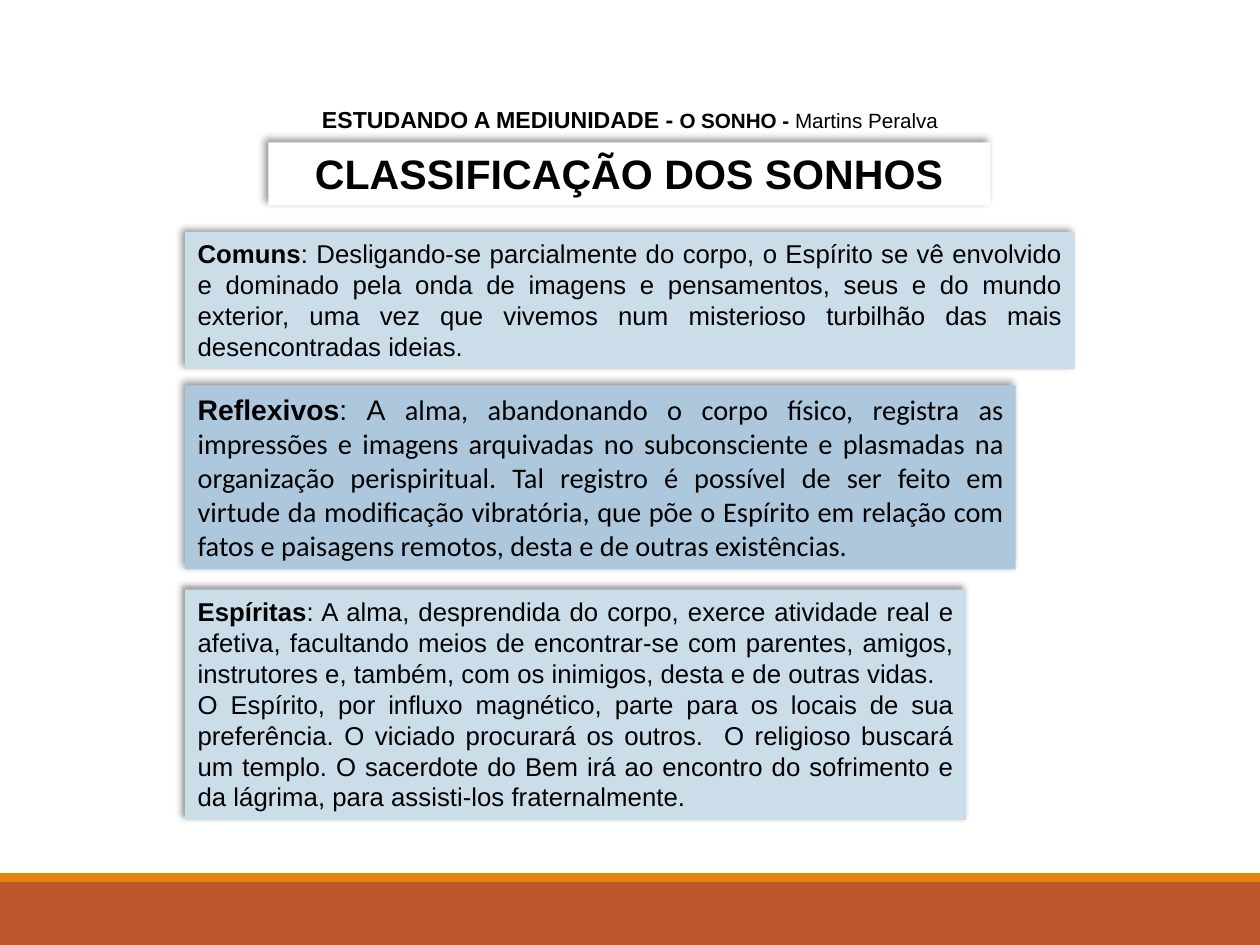
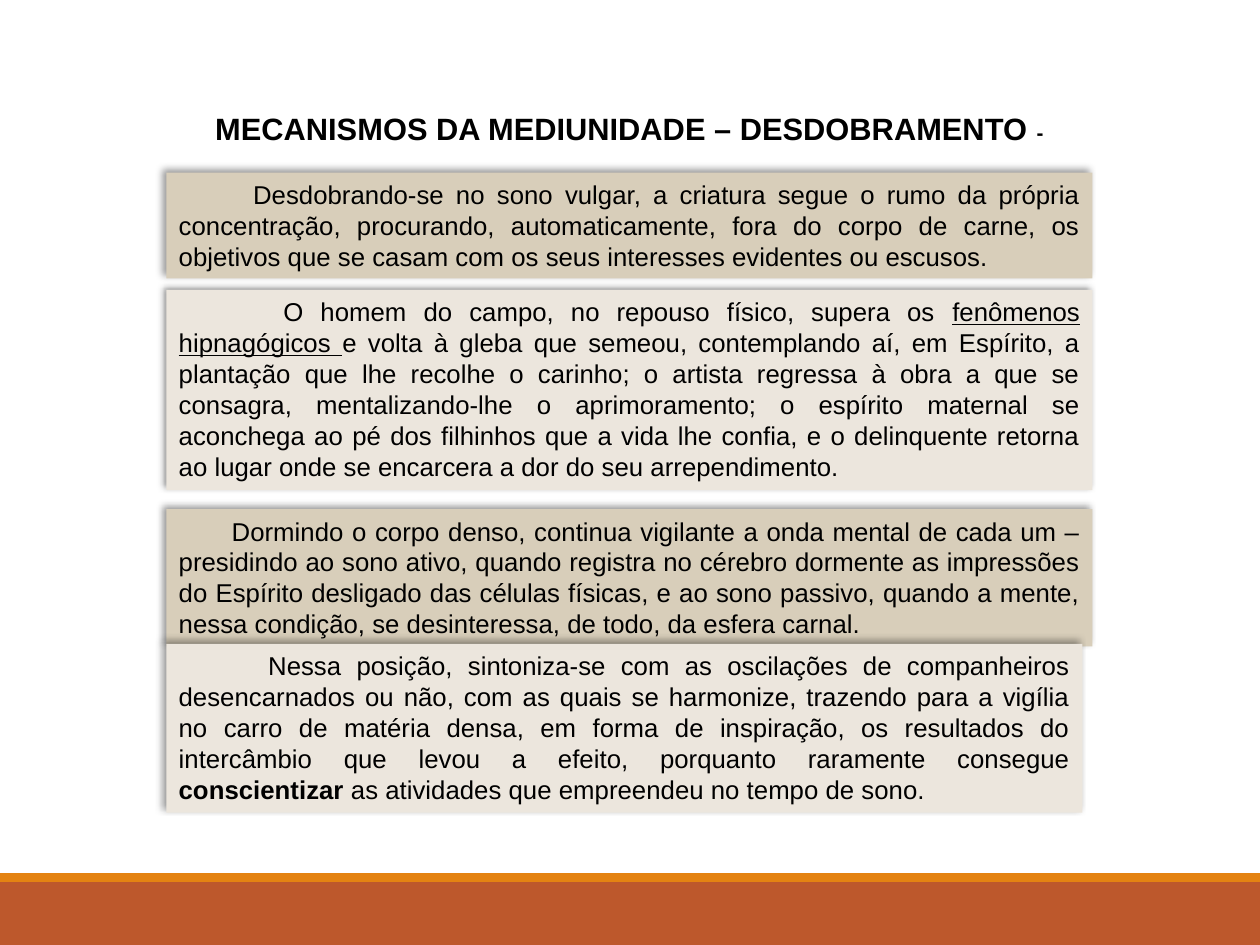
from lxml import etree
from pptx import Presentation
from pptx import util as u
from pptx.dml.color import RGBColor
from pptx.enum import shapes, text
from pptx.oxml.ns import qn

ORANGE, RUST, WHITE, BLACK = "E48312", "BD582C", "FFFFFF", "000000"
PALE_BLUE, BLUE = "CCDDEA", "ADC8DD"
SAND, PALE_SAND = "D8CEBA", "ECE6DD"
BODY = 14.7
CENTER, JUSTIFY = text.PP_ALIGN.CENTER, text.PP_ALIGN.JUSTIFY


def add_rect(s, box, color):
    sp = s.shapes.add_shape(shapes.MSO_SHAPE.RECTANGLE, *map(u.Inches, box))
    sp.shadow.inherit = False
    sp.fill.solid()
    sp.fill.fore_color.rgb = RGBColor.from_string(color)
    sp.line.fill.background()
    return sp


def add_text(s, box, paragraphs, size=BODY, fill=None, align=JUSTIFY, indent=0):
    """Each run is (text, {font attribute: value}); a fill makes a shadowed panel."""
    if fill:
        sp = add_rect(s, box, fill)
        effects = sp._element.spPr.find(qn("a:effectLst"))
        shadow = etree.SubElement(effects, qn("a:outerShdw"), blurRad=str(u.Pt(4)),
                                  dist=str(u.Pt(3)), dir=str(225 * 60000),
                                  algn="br", rotWithShape="0")
        color = etree.SubElement(shadow, qn("a:srgbClr"), val=BLACK)
        etree.SubElement(color, qn("a:alpha"), val="40000")
    else:
        sp = s.shapes.add_textbox(*map(u.Inches, box))
    tf = sp.text_frame
    tf.word_wrap = True
    tf.auto_size = text.MSO_AUTO_SIZE.SHAPE_TO_FIT_TEXT
    tf.vertical_anchor = text.MSO_ANCHOR.TOP
    for i, runs in enumerate(paragraphs):
        p = tf.add_paragraph() if i else tf.paragraphs[0]
        p.alignment = align
        p.font.size, p.font.name = u.Pt(size), "Arial"
        p.font.color.rgb = RGBColor.from_string(BLACK)
        if indent:
            p._p.get_or_add_pPr().set("indent", str(u.Inches(indent)))
        for words, look in runs:
            r = p.add_run()
            r.text = words
            # Run values are complete, so each run draws alike everywhere
            look = {"size": u.Pt(size), "name": "Arial", **look}
            for key, value in look.items():
                setattr(r.font, key, value)
            r.font.color.rgb = RGBColor.from_string(BLACK)


prs = Presentation()
prs.slide_width, prs.slide_height = u.Inches(10), u.Inches(7.5)
bold, small = {"bold": True}, {"size": u.Pt(11.8)}

# Shared footer bands
for _ in range(2):
    s = prs.slides.add_slide(prs.slide_layouts[6])
    add_rect(s, (0, 7, 10, 0.5), RUST)
    add_rect(s, (0, 6.93, 10, 0.07), ORANGE)
dreams, mechanisms = prs.slides

# Slide 1: headings
add_text(dreams, (1.47, 0.79, 7.06, 0.32),
         [[("ESTUDANDO A MEDIUNIDADE - ", bold),
           ("O SONHO - ", {**bold, **small}),
           ("Martins Peralva", small)]], size=13.2, align=CENTER)
add_text(dreams, (2.13, 1.13, 5.73, 0.5),
         [[("CLASSIFICAÇÃO DOS SONHOS", bold)]],
         size=23.5, fill=WHITE, align=CENTER)

# Slide 1: kinds of dream (top, width, height, fill, size, paragraphs)
kinds = [
    (1.84, 7.06, 1.09, PALE_BLUE, BODY, [[
        ("Comuns", bold),
        (": Desligando-se parcialmente do corpo, o Espírito se vê envolvido e "
         "dominado pela onda de imagens e pensamentos, seus e do mundo exterior, "
         "uma vez que vivemos num misterioso turbilhão das mais desencontradas "
         "ideias.", {})]]),
    (3.06, 6.59, 1.46, BLUE, 16.2, [[
        ("Reflexivos", bold),
        (": A", {}),
        (" alma, abandonando o corpo físico, registra as impressões e imagens "
         "arquivadas no subconsciente e plasmadas na organização perispiritual. "
         "Tal registro é possível de ser feito em virtude da modificação "
         "vibratória, que põe o Espírito em relação com fatos e paisagens "
         "remotos, desta e de outras existências.", {"name": "Calibri"})]]),
    (4.68, 6.2, 1.83, PALE_BLUE, BODY, [
        [("Espíritas", bold),
         (": A alma, desprendida do corpo, exerce atividade real e afetiva, "
          "facultando meios de encontrar-se com parentes, amigos, instrutores e, "
          "também, com os inimigos, desta e de outras vidas.", {})],
        [("O Espírito, por influxo magnético, parte para os locais de sua "
          "preferência. O viciado procurará os outros.  O religioso buscará um "
          "templo. O sacerdote do Bem irá ao encontro do sofrimento e da "
          "lágrima, para assisti-los fraternalmente.", {})]]),
]
for top, width, height, fill, size, paragraphs in kinds:
    add_text(dreams, (1.47, top, width, height), paragraphs, size, fill)

# Slide 2: heading
add_text(mechanisms, (1.55, 0.82, 6.89, 0.4),
         [[("MECANISMOS DA MEDIUNIDADE – DESDOBRAMENTO ", bold),
           ("-", {**bold, **small})]], size=17.6, align=CENTER)

# Slide 2: passages (top, width, height, fill, first-line indent, runs)
passages = [
    (1.37, 7.35, 0.84, SAND, 0.59, [
        ("Desdobrando-se no sono vulgar, a criatura segue o rumo da própria "
         "concentração, procurando, automaticamente, fora do corpo de carne, os "
         "objetivos que se casam com os seus interesses evidentes ou escusos.",
         {})]),
    (2.3, 7.35, 1.59, PALE_SAND, 0.83, [
        ("O homem do campo, no repouso físico, supera os ", {}),
        ("fenômenos hipnagógicos ", {"underline": True}),
        ("e volta à gleba que semeou, contemplando aí, em Espírito, a plantação "
         "que lhe recolhe o carinho; o artista regressa à obra a que se consagra, "
         "mentalizando-lhe o aprimoramento; o espírito maternal se aconchega ao "
         "pé dos filhinhos que a vida lhe confia, e o delinquente retorna ao "
         "lugar onde se encarcera a dor do seu arrependimento.", {})]),
    (4.04, 7.35, 1.09, SAND, 0.42, [
        ("Dormindo o corpo denso, continua vigilante a onda mental de cada um – "
         "presidindo ao sono ativo, quando registra no cérebro dormente as "
         "impressões do Espírito desligado das células físicas, e ao sono "
         "passivo, quando a mente, nessa condição, se desinteressa, de todo, da "
         "esfera carnal.", {})]),
    (5.11, 7.27, 1.34, PALE_SAND, 0.71, [
        ("Nessa posição, sintoniza-se com as oscilações de companheiros "
         "desencarnados ou não, com as quais se harmonize, trazendo para a "
         "vigília no carro de matéria densa, em forma de inspiração, os "
         "resultados do intercâmbio que levou a efeito, porquanto raramente "
         "consegue ", {}),
        ("conscientizar ", bold),
        ("as atividades que empreendeu no tempo de sono.", {})]),
]
for top, width, height, fill, indent, runs in passages:
    add_text(mechanisms, (1.32, top, width, height), [runs], fill=fill, indent=indent)

prs.save("out.pptx")
